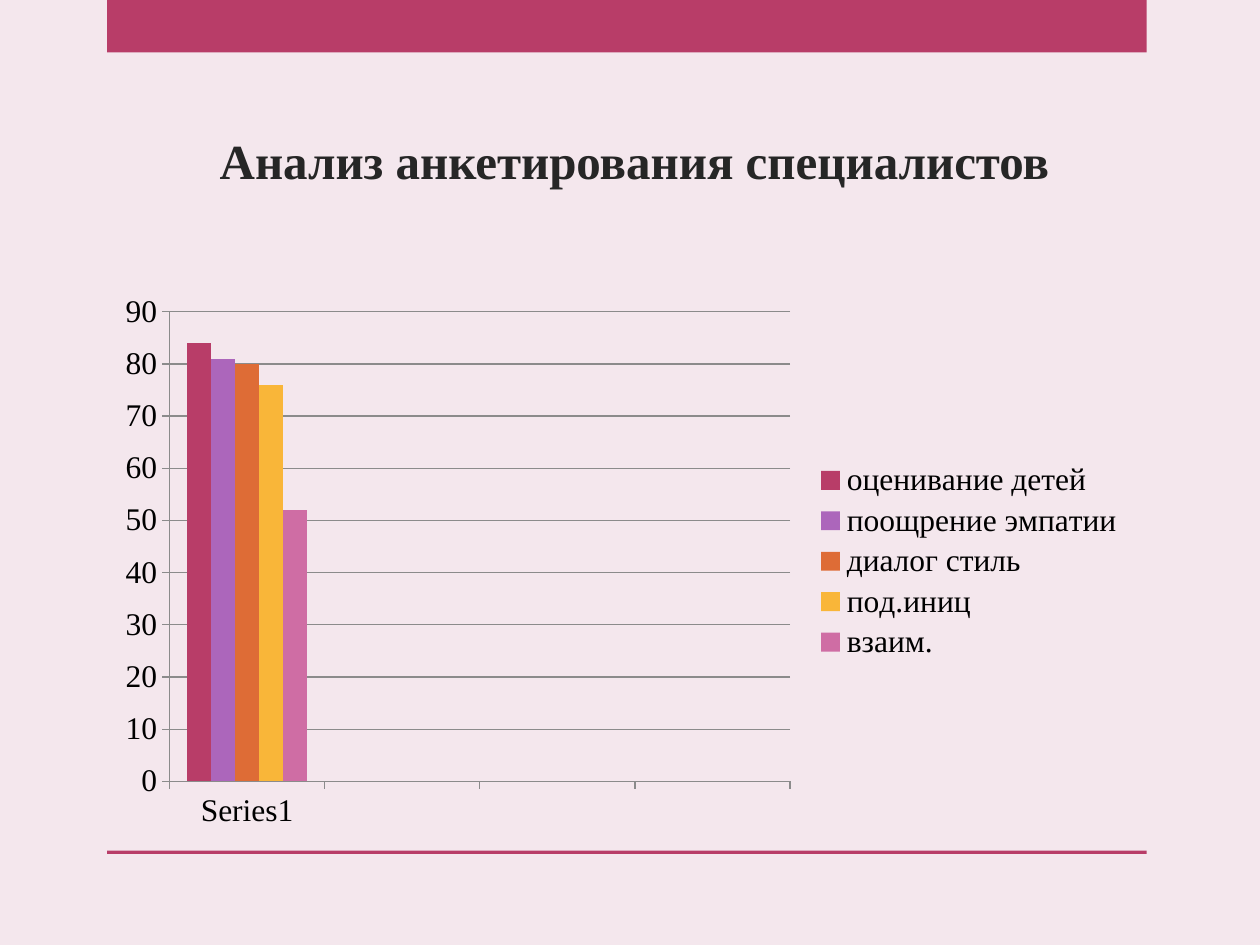
from dataclasses import dataclass

import pptx
import pptx.chart.data
import pptx.dml.color
import pptx.enum.chart
import pptx.enum.shapes
import pptx.enum.text
import pptx.util

Pt = pptx.util.Pt
RGBColor = pptx.dml.color.RGBColor

FONT = "Times New Roman"
PINK = RGBColor(0xF4, 0xE7, 0xED)
ROSE = RGBColor(0xB8, 0x3D, 0x68)
PLUM = RGBColor(0xAC, 0x66, 0xBB)
RUST = RGBColor(0xDE, 0x6C, 0x36)
GOLD = RGBColor(0xF9, 0xB6, 0x39)
MAUVE = RGBColor(0xCF, 0x6D, 0xA4)
INK = RGBColor(0x26, 0x26, 0x26)
BLACK = RGBColor(0, 0, 0)
GREY = RGBColor(0x8B, 0x8B, 0x8B)


@dataclass
class Band:
    top: float
    height: float


@dataclass
class Topic:
    name: str
    score: int
    color: RGBColor


BANDS = [Band(0, 30), Band(486, 2)]
GROUPS = ["Series1", "", "", ""]
TOPICS = [
    Topic("оценивание детей", 84, ROSE),
    Topic("поощрение эмпатии", 81, PLUM),
    Topic("диалог стиль", 80, RUST),
    Topic("под.иниц", 76, GOLD),
    Topic("взаим.", 52, MAUVE),
]


def draw_band(slide, band: Band) -> None:
    shape = slide.shapes.add_shape(
        pptx.enum.shapes.MSO_SHAPE.RECTANGLE,
        Pt(61.2), Pt(band.top), Pt(594), Pt(band.height))
    shape.shadow.inherit = False
    shape.fill.solid()
    shape.fill.fore_color.rgb = ROSE
    shape.line.fill.background()


def write_title(slide, text: str) -> None:
    title = slide.shapes.title
    title.left, title.top = Pt(70.5), Pt(54.7)
    title.width, title.height = Pt(584), Pt(57)
    frame = title.text_frame
    frame.word_wrap = True
    frame.vertical_anchor = pptx.enum.text.MSO_ANCHOR.BOTTOM
    para = frame.paragraphs[0]
    para.alignment = pptx.enum.text.PP_ALIGN.CENTER
    run = para.add_run()
    run.text = text
    run.font.name = FONT
    run.font.size = Pt(28)
    run.font.bold = True
    run.font.color.rgb = INK


def style_line(line) -> None:
    line.color.rgb = GREY
    line.width = Pt(0.75)


def draw_chart(slide, topics: list[Topic]) -> None:
    data = pptx.chart.data.CategoryChartData()
    data.categories = GROUPS
    for topic in topics:
        data.add_series(topic.name, [topic.score] + [None] * (len(GROUPS) - 1))
    chart = slide.shapes.add_chart(
        pptx.enum.chart.XL_CHART_TYPE.COLUMN_CLUSTERED,
        Pt(60), Pt(162), Pt(590), Pt(317.5), data).chart
    chart.has_title = False
    chart.font.name = FONT
    chart.font.size = Pt(18)
    chart.font.color.rgb = BLACK

    plot = chart.plots[0]
    plot.gap_width = 150
    plot.overlap = 0
    plot.vary_by_categories = False
    for series, topic in zip(plot.series, topics):
        series.format.fill.solid()
        series.format.fill.fore_color.rgb = topic.color

    for axis in (chart.category_axis, chart.value_axis):
        axis.major_tick_mark = pptx.enum.chart.XL_TICK_MARK.OUTSIDE
        style_line(axis.format.line)
    chart.value_axis.minimum_scale = 0
    chart.value_axis.maximum_scale = 90
    chart.value_axis.major_unit = 10
    chart.value_axis.has_major_gridlines = True
    style_line(chart.value_axis.major_gridlines.format.line)

    chart.has_legend = True
    chart.legend.position = pptx.enum.chart.XL_LEGEND_POSITION.RIGHT
    chart.legend.include_in_layout = False


def main() -> None:
    deck = pptx.Presentation()
    deck.slide_width, deck.slide_height = Pt(720), Pt(540)
    slide = deck.slides.add_slide(deck.slide_layouts.get_by_name("Title Only"))
    slide.background.fill.solid()
    slide.background.fill.fore_color.rgb = PINK
    for band in BANDS:
        draw_band(slide, band)
    write_title(slide, "Анализ анкетирования специалистов")
    draw_chart(slide, TOPICS)
    deck.save("out.pptx")


if __name__ == "__main__":
    main()
